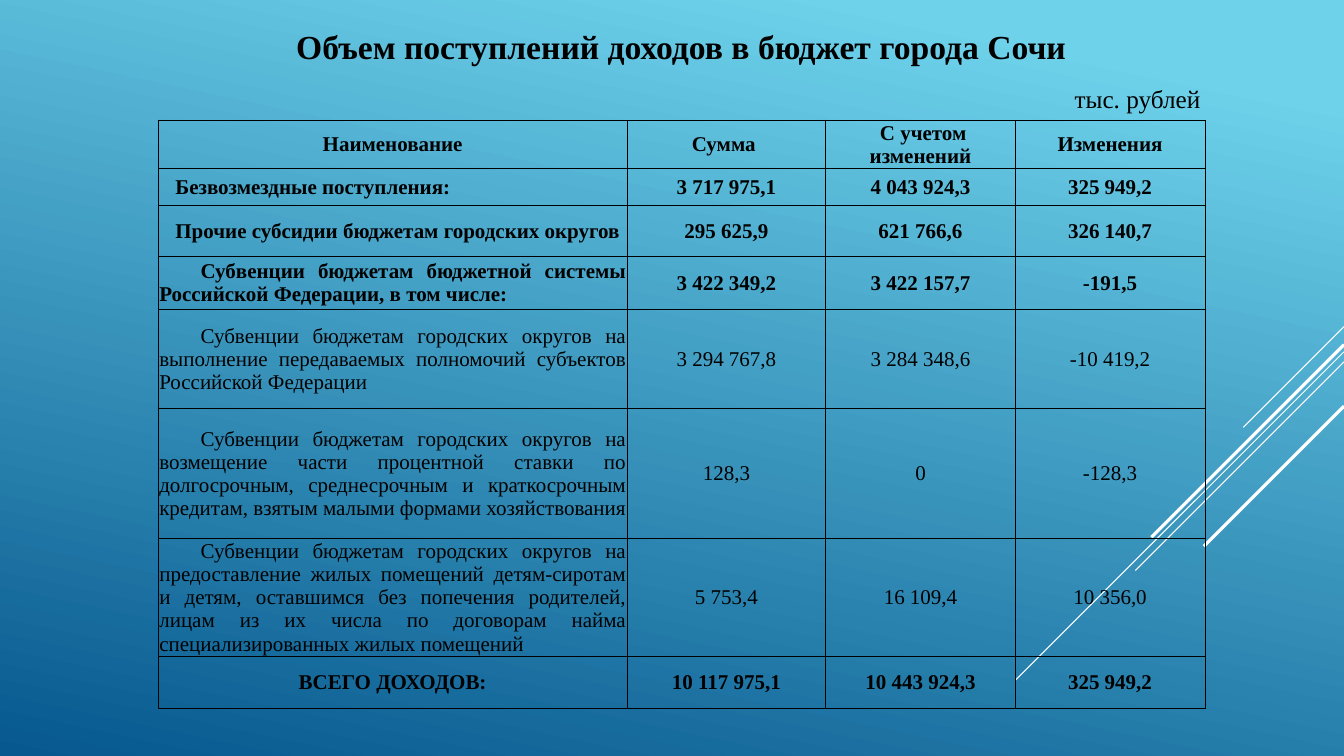
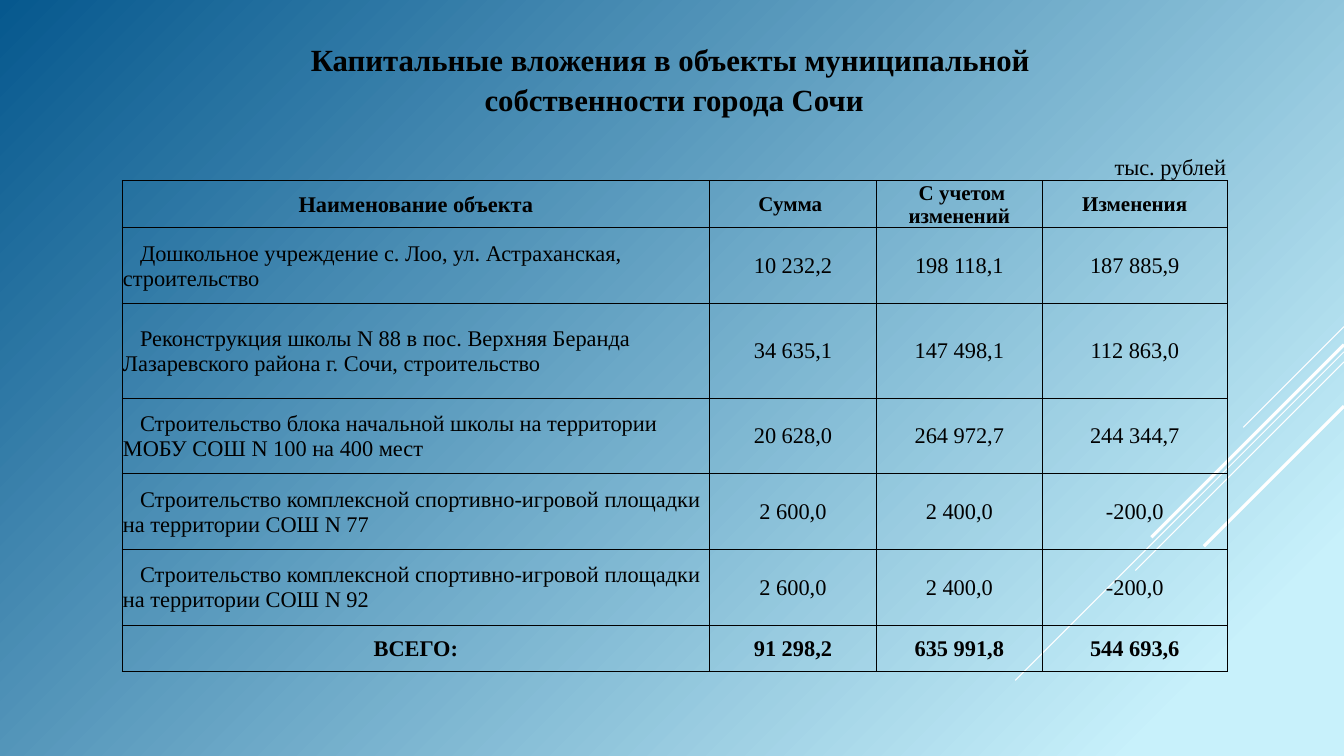
from dataclasses import dataclass
from lxml import etree
from pptx import Presentation
from pptx import util as u
from pptx.dml.color import RGBColor
from pptx.enum import shapes, text
from pptx.oxml import ns

I = u.Inches
AL = text.PP_ALIGN


@dataclass(frozen=True)
class Theme:
    font: str = "Times New Roman"
    ink: str = "000000"
    ray: str = "FFFFFF"
    deep: str = "06588E"
    sky: str = "6ED2EB"
    pale: str = "C8F1FB"
    rule: float = 0.5
    thin: float = 0.75
    thick: float = 2.25
    head: int = 15
    body: int = 16
    unit: int = 18


T = Theme()
UNIT = "тыс. рублей"
HEADS = ("Сумма\u00a0", "\u00a0С учетом изменений", "Изменения")

# Diagonal rays: top at the right edge, horizontal and vertical run, weight
RAYS = (
    (3.24, 1.0, T.thin),
    (3.49, 3.26, T.thin),
    (3.59, 2.07, T.thin),
    (3.42, 1.91, T.thick),
    (4.03, 1.39, T.thick),
)

INCOME = (
    ("Наименование", *HEADS),
    ("Безвозмездные поступления:", "3 717 975,1", "4 043 924,3", "325 949,2"),
    ("Прочие субсидии бюджетам городских округов",
     "295 625,9", "621 766,6", "326 140,7"),
    ("Субвенции бюджетам бюджетной системы Российской Федерации, в том числе:",
     "3 422 349,2", "3 422 157,7", "-191,5"),
    ("Субвенции бюджетам городских округов на выполнение передаваемых "
     "полномочий субъектов Российской Федерации",
     "3 294 767,8", "3 284 348,6", "-10 419,2"),
    ("Субвенции бюджетам городских округов на возмещение части процентной "
     "ставки по долгосрочным, среднесрочным и краткосрочным кредитам, "
     "взятым малыми формами хозяйствования", "128,3", "0", "-128,3"),
    ("Субвенции бюджетам городских округов на предоставление жилых помещений "
     "детям-сиротам и детям, оставшимся без попечения родителей, лицам из их "
     "числа по договорам найма специализированных жилых помещений",
     "5 753,4", "16 109,4", "10 356,0"),
    ("ВСЕГО ДОХОДОВ:", "10 117 975,1", "10 443 924,3", "325 949,2"),
)

WORKS = (
    (UNIT, "", "", ""),
    ("Наименование объекта", *HEADS),
    ("Дошкольное учреждение с. Лоо, ул. Астраханская, строительство",
     "10 232,2", "198 118,1", "187 885,9"),
    ("Реконструкция школы N 88 в пос. Верхняя Беранда Лазаревского района "
     "г. Сочи, строительство", "34 635,1", "147 498,1", "112 863,0"),
    ("Строительство блока начальной школы на территории МОБУ СОШ N 100 "
     "на 400 мест", "20 628,0", "264 972,7", "244 344,7"),
    ("Строительство комплексной спортивно-игровой площадки на территории "
     "СОШ N 77", "2 600,0", "2 400,0", "-200,0"),
    ("Строительство комплексной спортивно-игровой площадки на территории "
     "СОШ N 92", "2 600,0", "2 400,0", "-200,0"),
    ("ВСЕГО:", "91 298,2", "635 991,8", "544 693,6"),
)


def style(para, size, bold=False, align=None):
    para.alignment = align
    for run in para.runs:
        font = run.font
        font.name, font.size, font.bold = T.font, u.Pt(size), bold
        font.color.rgb = RGBColor.from_string(T.ink)


# Background gradient
def paint(slide, light, angle=None):
    fill = slide.background.fill
    fill.gradient()
    for stop, tone, pos in zip(fill.gradient_stops, (light, T.deep), (0.1, 1)):
        stop.color.rgb = RGBColor.from_string(tone)
        stop.position = pos
    if angle is not None:
        fill.gradient_angle = angle
        return
    # Without an angle the gradient spreads from the lower right corner
    lin = next(slide.background._cSld.iter(ns.qn("a:lin")))
    ring = etree.Element(ns.qn("a:path"), {"path": "circle"})
    etree.SubElement(ring, ns.qn("a:fillToRect"), l="100000", t="100000")
    lin.getparent().replace(lin, ring)


# Rays at the right edge
def rays(slide, right=13.33):
    for top, run, width in RAYS:
        ray = slide.shapes.add_connector(
            shapes.MSO_CONNECTOR.STRAIGHT,
            I(right), I(top), I(right - run), I(top + run))
        ray.line.color.rgb = RGBColor.from_string(T.ray)
        ray.line.width = u.Pt(width)
        etree.SubElement(ray._element.spPr, ns.qn("a:effectLst"))


# Text box, one paragraph per line
def label(slide, box, lines, size, bold=False, align=None, gap=None):
    frame = slide.shapes.add_textbox(*map(I, box)).text_frame
    frame.word_wrap = True
    frame.text = "\n".join(lines)
    for para in frame.paragraphs:
        style(para, size, bold, align)
        para.line_spacing = gap


def title(slide, box, lines, size):
    label(slide, box, lines, size, True, AL.CENTER, 1.08)


# Cell borders: only the named sides are drawn
def edge(cell, sides="LRTB"):
    props = cell._tc.get_or_add_tcPr()
    for n, side in enumerate("LRTB"):
        line = etree.Element(ns.qn("a:ln" + side), w=str(u.Pt(T.rule)))
        if side in sides:
            fill = etree.SubElement(line, ns.qn("a:solidFill"))
            etree.SubElement(fill, ns.qn("a:srgbClr"), val=T.ink)
        else:
            etree.SubElement(line, ns.qn("a:noFill"))
        props.insert(n, line)


def put(cell, words, size, bold, align=AL.CENTER, indent=0):
    cell.fill.background()
    cell.margin_left = cell.margin_right = cell.margin_top = I(0.01)
    cell.margin_bottom = 0
    cell.vertical_anchor = text.MSO_ANCHOR.MIDDLE
    para = cell.text_frame.paragraphs[0]
    para.text = words
    style(para, size, bold, align)
    if indent:
        para._p.get_or_add_pPr().set("indent", str(I(indent)))


# Table: looks(row, col) gives size, bold, alignment and indent
def grid(slide, left, top, cols, rows, data, looks):
    table = slide.shapes.add_table(
        len(rows), len(cols), I(left), I(top), I(sum(cols)), I(sum(rows))).table
    table.first_row = table.horz_banding = False
    for col, width in zip(table.columns, cols):
        col.width = I(width)
    for r, (height, line) in enumerate(zip(rows, data)):
        table.rows[r].height = I(height)
        for c, words in enumerate(line):
            put(table.cell(r, c), words, *looks(r, c))
            edge(table.cell(r, c), "B" if line[0] == UNIT else "LRTB")
    return table


def income(slide):
    last = len(INCOME) - 1

    def looks(r, c):
        bold = r < 4 or r == last
        if c or r in (0, last):
            return T.head, bold
        # Wrapped rows start further in than single lines
        return T.head, bold, AL.JUSTIFY, 0.16 if r < 3 else 0.41

    paint(slide, T.sky, 258)
    rays(slide)
    grid(slide, 1.57, 1.19, (4.65, 1.97, 1.88, 1.88),
         (0.48, 0.37, 0.5, 0.53, 0.98, 1.29, 1.17, 0.52), INCOME, looks)
    label(slide, (10.56, 0.78, 1.45, 0.4), [UNIT], T.unit)
    title(slide, (1.65, 0.18, 10.21, 0.5),
          ["Объем поступлений доходов в бюджет города Сочи"], 24)


def works(slide):
    last = len(WORKS) - 1

    def looks(r, c):
        if r == 0:
            return T.body, False, AL.RIGHT
        if r == 1:
            return T.head if c else T.body, True
        if c or r == last:
            return T.body, r == last
        return T.body, False, AL.LEFT, 0.17

    paint(slide, T.pale)
    rays(slide)
    table = grid(slide, 1.21, 1.13, (5.83, 1.65, 1.65, 1.83),
                 (0.66, 0.47, 0.75, 0.94, 0.75, 0.75, 0.75, 0.46), WORKS, looks)
    # Unit line above the header
    table.cell(0, 0).merge(table.cell(0, 3))
    table.cell(0, 0).vertical_anchor = text.MSO_ANCHOR.BOTTOM
    title(slide, (1.21, 0.33, 10.95, 0.84),
          ["Капитальные вложения в объекты муниципальной ",
           "собственности города Сочи"], 22)


def main():
    deck = Presentation()
    deck.slide_width, deck.slide_height = I(13.33), I(7.5)
    for build in (income, works):
        build(deck.slides.add_slide(deck.slide_layouts[6]))
    deck.save("out.pptx")


if __name__ == "__main__":
    main()
